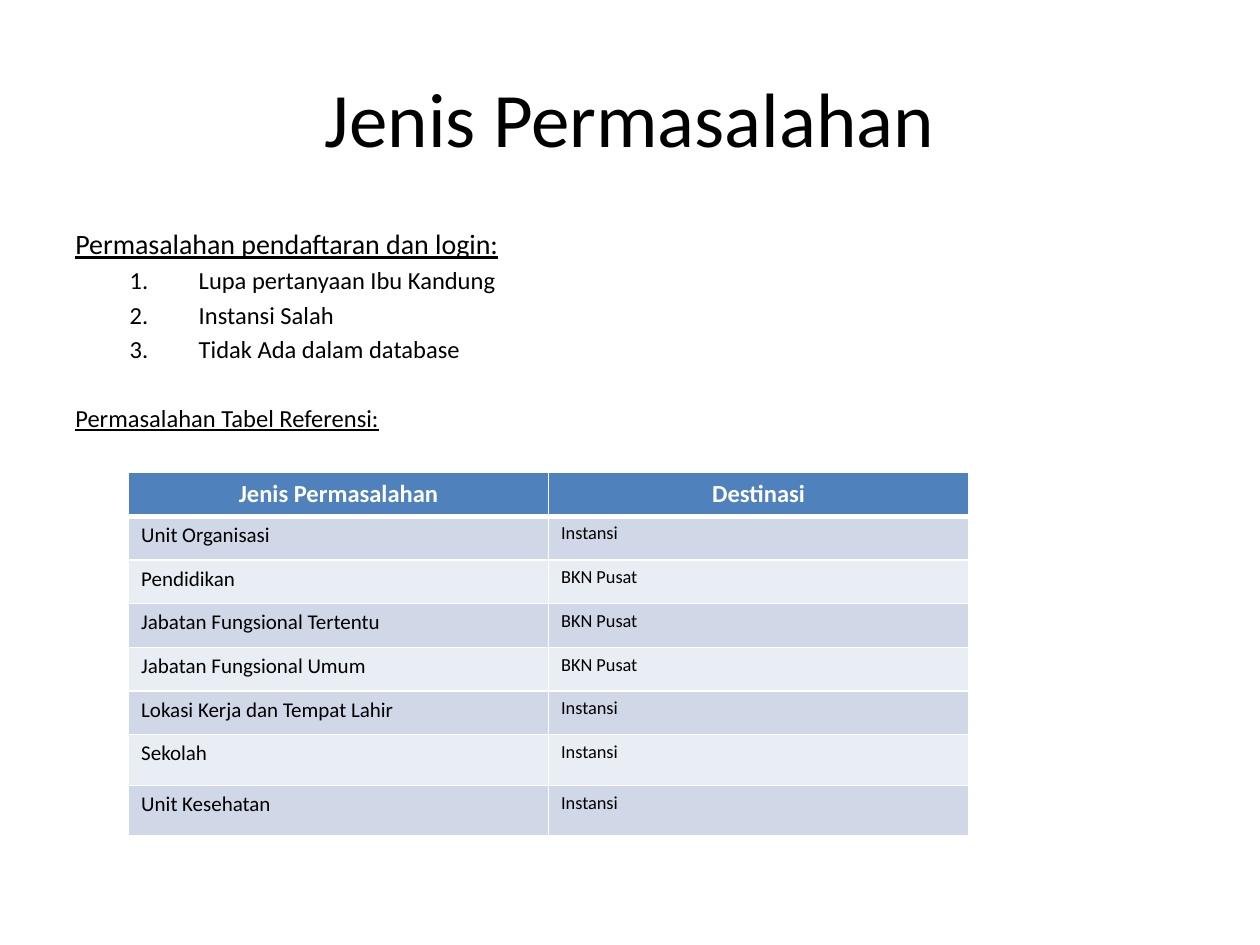
import dataclasses
import lxml.etree
import pptx
import pptx.dml.color
import pptx.enum.text
import pptx.oxml.ns
import pptx.util

Pt = pptx.util.Pt
ALIGN = pptx.enum.text.PP_ALIGN
MID = pptx.enum.text.MSO_ANCHOR.MIDDLE


@dataclasses.dataclass
class Theme:
    face: str = "Calibri"
    ink: str = "000000"
    white: str = "FFFFFF"
    head: str = "4F81BD"
    bands: tuple = ("D0D8E8", "E9EDF4")
    title: float = 44
    lead: float = 16
    body: float = 14
    cell: float = 12
    note: float = 10.5
    thin: float = 1
    thick: float = 3


def color(code):
    return pptx.dml.color.RGBColor.from_string(code)


def apply(item, form):
    for name, value in form.items():
        setattr(item, name, value)


def add(parent, tag, **attrs):
    return lxml.etree.SubElement(parent, pptx.oxml.ns.qn(tag), attrs)


class Page:
    def __init__(self, deck, theme):
        self.theme = theme
        self.slide = deck.slides.add_slide(deck.slide_layouts[6])

    def label(self, para, text, size, code=None, **form):
        run = para.add_run()
        run.text = text
        apply(run.font, {"name": self.theme.face, "size": Pt(size), **form})
        run.font.color.rgb = color(code or self.theme.ink)

    def box(self, left, top, width, height, **form):
        shape = self.slide.shapes.add_textbox(Pt(left), Pt(top), Pt(width), Pt(height))
        apply(shape.text_frame, {"word_wrap": True, **form})
        return shape.text_frame

    def title(self, text, *place):
        para = self.box(*place, vertical_anchor=MID).paragraphs[0]
        para.alignment = ALIGN.CENTER
        self.label(para, text, self.theme.title)

    def body(self, lead, items, close, *place):
        frame = self.box(*place)
        size = self.theme.body
        self.label(frame.paragraphs[0], lead, self.theme.lead, underline=True)
        for text in items:
            para = frame.add_paragraph()
            props = para._p.get_or_add_pPr()
            for name, value in {"marL": 70.5, "indent": -39.5}.items():
                props.set(name, str(int(Pt(value))))
            add(props, "a:buAutoNum", type="arabicPeriod")
            apply(para, {"level": 1, "space_before": Pt(size * 0.2)})
            self.label(para, text, size)
        para = frame.add_paragraph()
        para.space_before = Pt(22.7)
        self.label(para, close, size, underline=True)

    def edge(self, cell, base):
        props = cell._tc.get_or_add_tcPr()
        for side in "LRTB":
            width = base if side == "B" else self.theme.thin
            line = add(props, "a:ln" + side, w=str(int(Pt(width))))
            add(add(line, "a:solidFill"), "a:srgbClr", val=self.theme.white)

    def fill(self, cell, text, back, base, align, *style, **form):
        self.edge(cell, base)
        cell.fill.solid()
        cell.fill.fore_color.rgb = color(back)
        para = cell.text_frame.paragraphs[0]
        para.alignment = align
        self.label(para, text, *style, **form)

    def table(self, head, rows, left, top, wide, highs):
        theme = self.theme
        shape = self.slide.shapes.add_table(
            len(highs), len(head), Pt(left), Pt(top), Pt(wide * len(head)), Pt(sum(highs)))
        grid = shape.table
        for col in grid.columns:
            col.width = Pt(wide)
        for row, high in zip(grid.rows, highs):
            row.height = Pt(high)
        for col, text in enumerate(head):
            self.fill(grid.cell(0, col), text, theme.head, theme.thick, ALIGN.CENTER,
                      theme.body, theme.white, bold=True)
        for row, texts in enumerate(rows, 1):
            back = theme.bands[(row - 1) % 2]
            for col, (text, size) in enumerate(zip(texts, (theme.cell, theme.note))):
                self.fill(grid.cell(row, col), text, back, theme.thin, ALIGN.LEFT,
                          size, bold=False)


def main():
    deck = pptx.Presentation()
    apply(deck, {"slide_width": Pt(720), "slide_height": Pt(540)})
    page = Page(deck, Theme())
    page.title("Jenis Permasalahan", 36, 21.6, 648, 90)
    page.body(
        "Permasalahan pendaftaran dan login:",
        ["Lupa pertanyaan Ibu Kandung", "Instansi Salah", "Tidak Ada dalam database"],
        "Permasalahan Tabel Referensi:",
        36, 126, 648, 356.4)
    page.table(
        ["Jenis Permasalahan", "Destinasi"],
        [("Unit Organisasi", "Instansi"),
         ("Pendidikan", "BKN Pusat"),
         ("Jabatan Fungsional Tertentu", "BKN Pusat"),
         ("Jabatan Fungsional Umum", "BKN Pusat"),
         ("Lokasi Kerja dan Tempat Lahir", "Instansi"),
         ("Sekolah", "Instansi"),
         ("Unit Kesehatan", "Instansi")],
        73.5, 270, 240, [25] * 6 + [29] * 2)
    deck.save("out.pptx")


if __name__ == "__main__":
    main()
